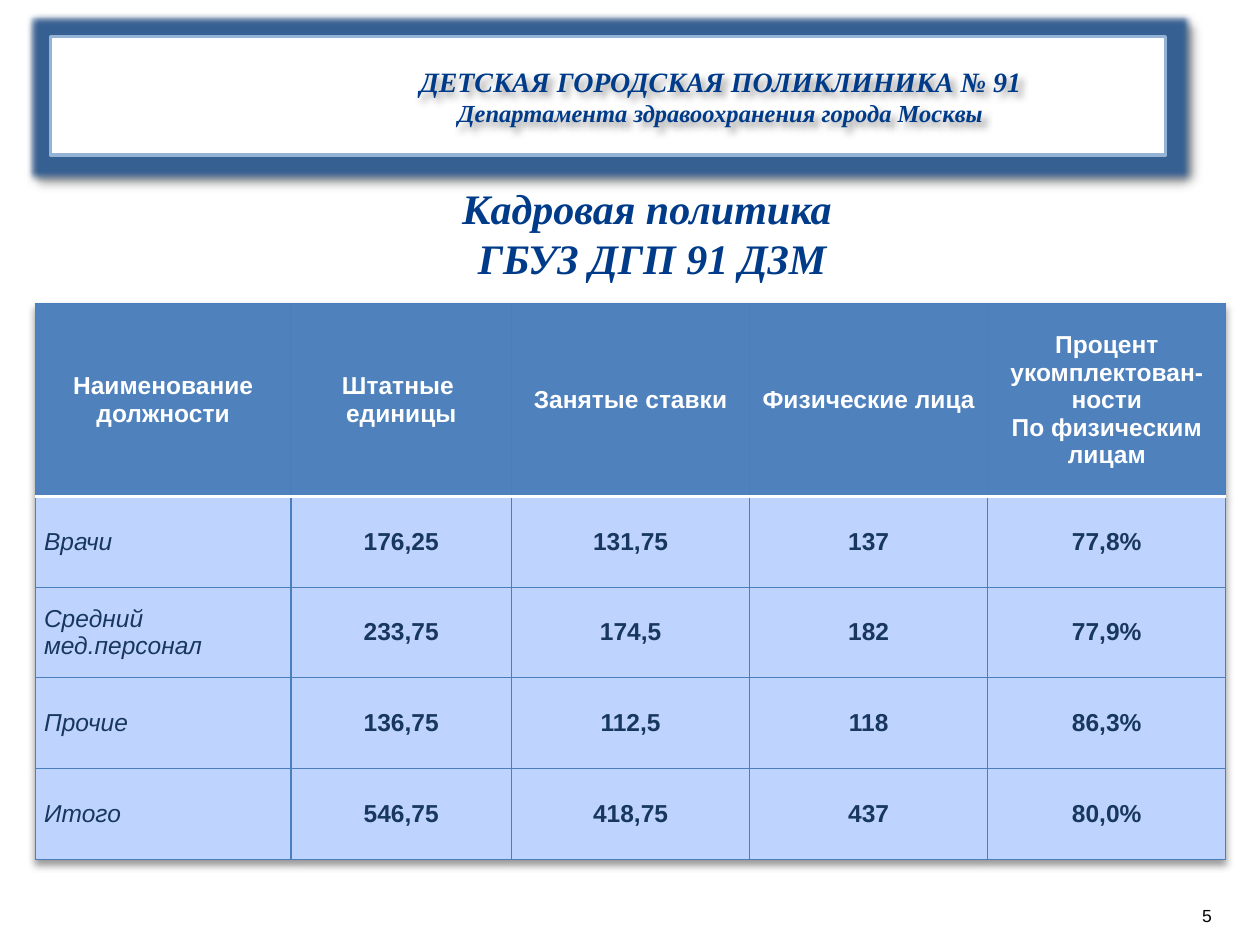
from lxml import etree
from pptx import Presentation, util as u
from pptx.dml.color import RGBColor
from pptx.enum import shapes, text
from pptx.oxml import ns

COLORS = {"navy": "003B89", "frame": "95B3D7", "glow": "376092", "head": "4F81BD",
          "body": "BFD3FF", "border": "4B7EBC", "ink": "17375E",
          "white": "FFFFFF", "black": "000000"}
HEADING = {"name": "Times New Roman", "bold": True, "italic": True}
COLUMNS = [2.03, 1.75, 1.89, 1.89, 1.89]
ROWS = [1.53, 0.72, 0.72, 0.72, 0.72]
STAFF = [
    ["Наименование должности", "Штатные \nединицы", "Занятые ставки", "Физические лица",
     "Процент укомплектован-ности\nПо физическим лицам"],
    ["Врачи", "176,25", "131,75", "137", "77,8%"],
    ["Средний \nмед.персонал", "233,75", "174,5", "182", "77,9%"],
    ["Прочие", "136,75", "112,5", "118", "86,3%"],
    ["Итого", "546,75", "418,75", "437", "80,0%"],
]


def rgb(name):
    """Return the named palette colour."""
    return RGBColor.from_string(COLORS[name])


def box(*sides):
    """Convert inches to lengths."""
    return [u.Inches(side) for side in sides]


def add_xml(parent, tag, **attrs):
    """Append a DrawingML element and return it."""
    return etree.SubElement(parent, ns.qn(tag), {k: str(v) for k, v in attrs.items()})


def add_color(parent, name, alpha=100):
    """Append a colour with its opacity in percent."""
    clr = add_xml(parent, "a:srgbClr", val=COLORS[name])
    add_xml(clr, "a:alpha", val=alpha * 1000)


def add_shadow(effects, blur, dist, angle, alpha):
    """Append an outer shadow to an effect list."""
    shadow = add_xml(effects, "a:outerShdw", blurRad=u.Pt(blur), dist=u.Pt(dist),
                     dir=angle * 60000, algn="tl", rotWithShape=0)
    add_color(shadow, "black", alpha)


def effect_list(s):
    """Give a shape its own effect list and return it."""
    s.shadow.inherit = False
    return s._element.spPr.find(ns.qn("a:effectLst"))


def style_run(r, color, **formats):
    """Apply font values and a colour to a run."""
    for key, value in formats.items():
        setattr(r.font, key, value)
    r.font.color.rgb = rgb(color)


def write(tf, lines, align, color, **formats):
    """Fill a text frame with (text, size) paragraphs."""
    tf.vertical_anchor = text.MSO_ANCHOR.MIDDLE
    for i, (words, size) in enumerate(lines):
        p = tf.paragraphs[0] if i == 0 else tf.add_paragraph()
        p.alignment = align
        r = p.add_run()
        r.text = words
        style_run(r, color, size=u.Pt(size), **formats)


def add_text(slide, at, lines, align, color, wrap=True, inset=None, **formats):
    """Add a text box and return it."""
    s = slide.shapes.add_textbox(*box(*at))
    s.text_frame.word_wrap = wrap
    if inset is not None:
        for side in ("left", "top", "right", "bottom"):
            setattr(s.text_frame, f"margin_{side}", u.Inches(inset))
    write(s.text_frame, lines, align, color, **formats)
    return s


def add_banner(slide):
    """Add the glowing frame with the clinic's name."""
    s = slide.shapes.add_shape(shapes.MSO_SHAPE.RECTANGLE, *box(0.4, 0.29, 8.85, 0.94))
    s.fill.solid()
    s.fill.fore_color.rgb = rgb("white")
    s.line.color.rgb = rgb("frame")
    s.line.width = u.Pt(2)
    effects = effect_list(s)
    add_color(add_xml(effects, "a:glow", rad=u.Pt(8)), "glow")
    add_shadow(effects, 4, 3, 45, 40)
    name = add_text(slide, (1.46, 0.21, 8.52, 1.11),
                    [("ДЕТСКАЯ ГОРОДСКАЯ ПОЛИКЛИНИКА № 91", 16),
                     ("Департамента здравоохранения города Москвы", 14)],
                    text.PP_ALIGN.CENTER, "navy", **HEADING)
    add_shadow(effect_list(name), 4, 3, 45, 40)


def add_title(slide):
    """Place and format the title."""
    s = slide.shapes.title
    s.left, s.top, s.width, s.height = box(3.55, 1.39, 3.25, 0.91)
    tf = s.text_frame
    tf.word_wrap = False
    tf.auto_size = text.MSO_AUTO_SIZE.NONE
    tf.vertical_anchor = text.MSO_ANCHOR.MIDDLE
    p = tf.paragraphs[0]
    p.alignment = text.PP_ALIGN.CENTER
    p.text = "Кадровая политика \vГБУЗ ДГП 91 ДЗМ"
    for r in p.runs:
        style_run(r, "navy", size=u.Pt(24), **HEADING)


def set_borders(cell, row):
    """Draw cell borders with a white rule under the header."""
    white_side = {0: "B", 1: "T"}.get(row)
    for side in "LRTB":
        color, width = ("white", 2) if side == white_side else ("border", 0.75)
        ln = add_xml(cell._tc.get_or_add_tcPr(), f"a:ln{side}", w=u.Pt(width))
        add_color(add_xml(ln, "a:solidFill"), color)


def add_staff_table(slide):
    """Add the staffing table."""
    frame = slide.shapes.add_table(len(ROWS), len(COLUMNS), *box(0.28, 2.41, 9.45, 4.41))
    table = frame.table
    table.horz_banding = False
    effects = add_xml(table._tbl.tblPr, "a:effectLst")
    table._tbl.tblPr.insert(0, effects)
    add_shadow(effects, 4, 3, 90, 40)
    for column, width in zip(table.columns, COLUMNS):
        column.width = u.Inches(width)
    for i, (height, values) in enumerate(zip(ROWS, STAFF)):
        table.rows[i].height = u.Inches(height)
        for j, value in enumerate(values):
            cell = table.cell(i, j)
            is_label = i > 0 and j == 0
            set_borders(cell, i)
            cell.fill.solid()
            cell.fill.fore_color.rgb = rgb("body" if i else "head")
            cell.margin_left = cell.margin_right = u.Inches(0.07)
            cell.margin_top = cell.margin_bottom = 0
            cell.vertical_anchor = text.MSO_ANCHOR.MIDDLE
            align = text.PP_ALIGN.JUSTIFY if is_label else text.PP_ALIGN.CENTER
            write(cell.text_frame, [(line, 14) for line in value.split("\n")], align,
                  "ink" if i else "white", name="Arial", bold=not is_label, italic=is_label)


def main():
    """Build and save the slide."""
    prs = Presentation()
    prs.slide_width, prs.slide_height = box(10, 7.5)
    slide = prs.slides.add_slide(prs.slide_layouts[5])
    add_banner(slide)
    add_title(slide)
    add_staff_table(slide)
    add_text(slide, (9.54, 7.18, 0.23, 0.17), [("5", 10)], text.PP_ALIGN.LEFT, "black",
             wrap=False, inset=0, name="Arial")
    prs.save("out.pptx")


if __name__ == "__main__":
    main()
